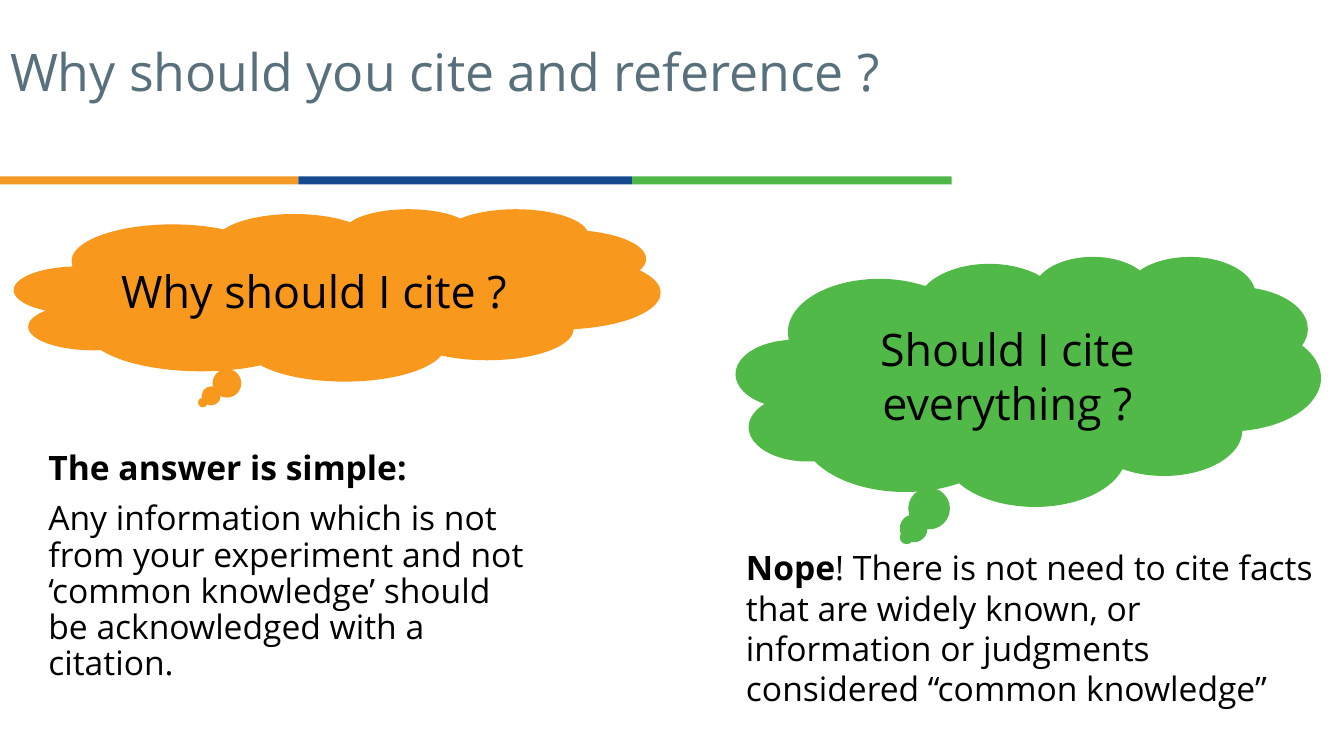
from lxml import etree
from pptx import Presentation
from pptx.dml.color import RGBColor
from pptx.enum.shapes import MSO_SHAPE
from pptx.enum.text import MSO_ANCHOR, MSO_AUTO_SIZE, PP_ALIGN
from pptx.oxml.ns import qn
from pptx.util import Inches, Pt

RECTANGLE = MSO_SHAPE.RECTANGLE
CLOUD = MSO_SHAPE.CLOUD_CALLOUT
TOP = MSO_ANCHOR.TOP
MIDDLE = MSO_ANCHOR.MIDDLE
NO_AUTOFIT = MSO_AUTO_SIZE.NONE
LEFT = PP_ALIGN.LEFT
CENTER = PP_ALIGN.CENTER


def add_filled_shape(preset, left, top, width, height, color):
    shape = page.shapes.add_shape(
        preset, Inches(left), Inches(top), Inches(width), Inches(height))
    shape.shadow.inherit = False
    shape.fill.solid()
    shape.fill.fore_color.rgb = RGBColor.from_string(color)
    shape.line.fill.background()
    return shape


def format_text(frame, size, color, align, anchor):
    frame.word_wrap = True
    frame.auto_size = NO_AUTOFIT
    frame.vertical_anchor = anchor
    for para in frame.paragraphs:
        para.alignment = align
        for span in para.runs:
            span.font.name = "Open Sans"
            span.font.size = Pt(size)
            span.font.color.rgb = RGBColor.from_string(color)


deck = Presentation()
deck.slide_width = Inches(13.33)
deck.slide_height = Inches(7.5)
page = deck.slides.add_slide(deck.slide_layouts[1])

bar_left = 0
for width, color in ((2.96, "F49925"), (3.31, "154A90"), (3.17, "4EB748")):
    add_filled_shape(RECTANGLE, bar_left, 1.75, width, 0.08, color)
    bar_left += width

title = page.shapes.title
title.left, title.top = Inches(0), Inches(0.41)
title.width, title.height = Inches(10.51), Inches(1.18)
title.text_frame.text = "Why should you cite and reference ?"
title.text_frame.paragraphs[0].line_spacing = 0.9
format_text(title.text_frame, 37, "586F7C", LEFT, TOP)

body = page.placeholders[1]
body.left, body.top = Inches(0.3), Inches(4.43)
body.width, body.height = Inches(5.12), Inches(2.43)
body.text_frame.text = (
    "The answer is simple:\n"
    "Any information which is not from your experiment and not "
    "‘common knowledge’ should be acknowledged with a citation.")
for index, para in enumerate(body.text_frame.paragraphs):
    para.line_spacing = 0.9
    para.space_before = Pt(10 if index else 0)
    properties = para._p.get_or_add_pPr()
    properties.set("marL", str(Inches(0.08)))
    properties.set("indent", "0")
    etree.SubElement(properties, qn("a:buNone"))
format_text(body.text_frame, 24, "000000", LEFT, TOP)
body.text_frame.paragraphs[0].runs[0].font.bold = True

clouds = (
    ("Why should I cite ?", 0.14, 2.07, 6.41, 1.71, "F8981D"),
    ("Should I cite everything ?", 7.3, 2.54, 5.8, 2.48, "51B948"),
)
for question, left, top, width, height, color in clouds:
    cloud = add_filled_shape(CLOUD, left, top, width, height, color)
    cloud.adjustments[0] = -0.208
    cloud.adjustments[1] = 0.625
    cloud.text_frame.text = question
    format_text(cloud.text_frame, 32, "000000", CENTER, MIDDLE)

answer = page.shapes.add_textbox(
    Inches(7.3), Inches(5.38), Inches(5.89), Inches(2.12))
answer.text_frame.text = "Nope"
answer.text_frame.paragraphs[0].runs[0].font.bold = True
span = answer.text_frame.paragraphs[0].add_run()
span.text = "! There is not need to cite facts that are widely known, or"
para = answer.text_frame.add_paragraph()
para.text = "information or judgments considered “common knowledge”"
format_text(answer.text_frame, 24, "000000", LEFT, TOP)

deck.save("out.pptx")
